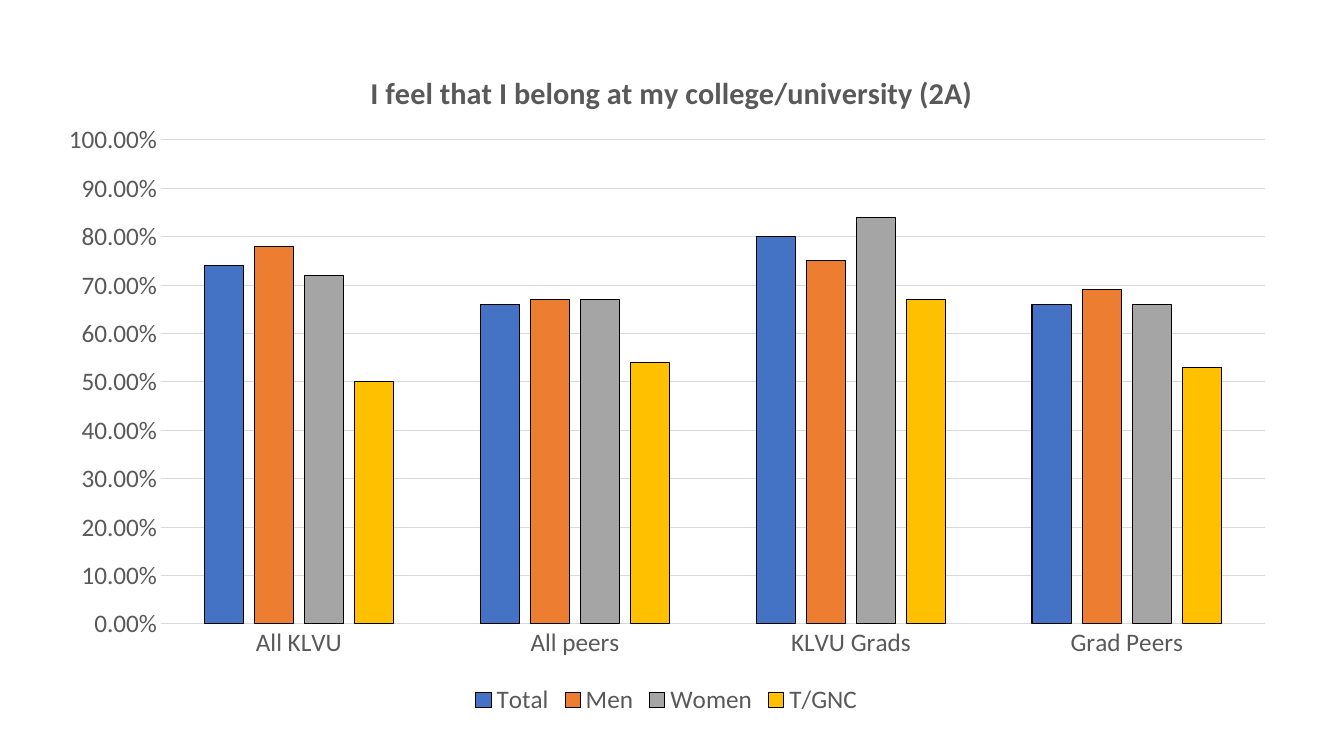
"""Build a slide with a clustered column chart on the sense of belonging."""
from lxml.etree import SubElement
from pptx import Presentation
from pptx.chart.data import CategoryChartData
from pptx.dml.color import RGBColor
from pptx.enum.chart import XL_CHART_TYPE, XL_LEGEND_POSITION, XL_TICK_MARK
from pptx.oxml import parse_xml
from pptx.oxml.ns import nsdecls, qn
from pptx.util import Pt

EMU_PER_PX = 914400 / 100.8
FONT = "Calibri"
WHITE = RGBColor(0xFF, 0xFF, 0xFF)
BLACK = RGBColor(0x00, 0x00, 0x00)
GRAY_TEXT = RGBColor(0x59, 0x59, 0x59)
GRID_GRAY = RGBColor(0xD9, 0xD9, 0xD9)
BLUE = RGBColor(0x44, 0x72, 0xC4)
ORANGE = RGBColor(0xED, 0x7D, 0x31)
GRAY = RGBColor(0xA5, 0xA5, 0xA5)
GOLD = RGBColor(0xFF, 0xC0, 0x00)

QUESTION = "I feel that I belong at my college/university (2A)"
GROUPS = ["All KLVU", "All peers", "KLVU Grads", "Grad Peers"]
ANSWERS = [
    ("Total", BLUE, (0.74, 0.66, 0.8, 0.66)),
    ("Men", ORANGE, (0.78, 0.67, 0.75, 0.69)),
    ("Women", GRAY, (0.72, 0.67, 0.84, 0.66)),
    ("T/GNC", GOLD, (0.5, 0.54, 0.67, 0.53)),
]
CHART_BOX = (43, 36, 1247, 684)
PLOT_BOX = (161, 140, 1104, 484)
TITLE_CORNER = (365, 66)


def px(length):
    return int(length * EMU_PER_PX)


def style_font(font, size=18, color=GRAY_TEXT, bold=False):
    font.name, font.size, font.bold = FONT, Pt(size), bold
    font.color.rgb = color


def write_text(frame, text, **font_format):
    run = frame.paragraphs[0].add_run()
    run.text = text
    style_font(run.font, **font_format)


def style_line(line, color):
    line.color.rgb = color
    line.width = Pt(0.75)


def place(part, index, corner, size=()):
    """Pin a chart part to a place on the slide given in px."""
    former = part.find(qn("c:layout"))
    if former is not None:
        part.remove(former)
    layout = parse_xml(f"<c:layout {nsdecls('c')}><c:manualLayout/></c:layout>")
    manual = layout[0]
    left, top, width, height = CHART_BOX
    settings = [("layoutTarget", "inner")] if size else []
    settings += [("xMode", "edge"), ("yMode", "edge"),
                 ("x", round((corner[0] - left) / width, 4)),
                 ("y", round((corner[1] - top) / height, 4))]
    if size:
        settings += [("w", round(size[0] / width, 4)), ("h", round(size[1] / height, 4))]
    for tag, value in settings:
        SubElement(manual, qn(f"c:{tag}")).set("val", str(value))
    part.insert(index, layout)


def style_axes(chart):
    groups, shares = chart.category_axis, chart.value_axis
    for axis in (groups, shares):
        axis.major_tick_mark = axis.minor_tick_mark = XL_TICK_MARK.NONE
        style_font(axis.tick_labels.font)
    style_line(groups.format.line, GRID_GRAY)
    shares.format.line.fill.background()
    shares.minimum_scale, shares.maximum_scale, shares.major_unit = 0, 1, 0.1
    shares.has_major_gridlines = True
    style_line(shares.major_gridlines.format.line, GRID_GRAY)
    shares.tick_labels.number_format = "0.00%"
    shares.tick_labels.number_format_is_linked = False


def style_columns(columns):
    columns.gap_width, columns.overlap = 219, -27
    columns.vary_by_categories = False
    for answer, (_, color, _) in zip(columns.series, ANSWERS):
        answer.invert_if_negative = False
        answer.format.fill.solid()
        answer.format.fill.fore_color.rgb = color
        style_line(answer.format.line, BLACK)


def add_belonging_chart(slide):
    survey = CategoryChartData(number_format="0.00%")
    survey.categories = GROUPS
    for name, _, shares in ANSWERS:
        survey.add_series(name, shares)
    chart = slide.shapes.add_chart(
        XL_CHART_TYPE.COLUMN_CLUSTERED, *map(px, CHART_BOX), survey).chart
    style_font(chart.font, color=BLACK)
    chart.has_title = True
    write_text(chart.chart_title.text_frame, QUESTION, size=21.6, bold=True)
    chart.chart_title.include_in_layout = False
    chart.has_legend = True
    chart.legend.position = XL_LEGEND_POSITION.BOTTOM
    chart.legend.include_in_layout = False
    style_font(chart.legend.font)
    style_axes(chart)
    style_columns(chart.plots[0])
    place(chart.element.find(f".//{qn('c:title')}"), 1, TITLE_CORNER)
    place(chart.element.find(f".//{qn('c:plotArea')}"), 0, PLOT_BOX[:2], PLOT_BOX[2:])


def main():
    deck = Presentation()
    deck.slide_width, deck.slide_height = px(1344), px(756)
    slide = deck.slides.add_slide(deck.slide_layouts[6])
    slide.background.fill.solid()
    slide.background.fill.fore_color.rgb = WHITE
    add_belonging_chart(slide)
    deck.save("out.pptx")


if __name__ == "__main__":
    main()
